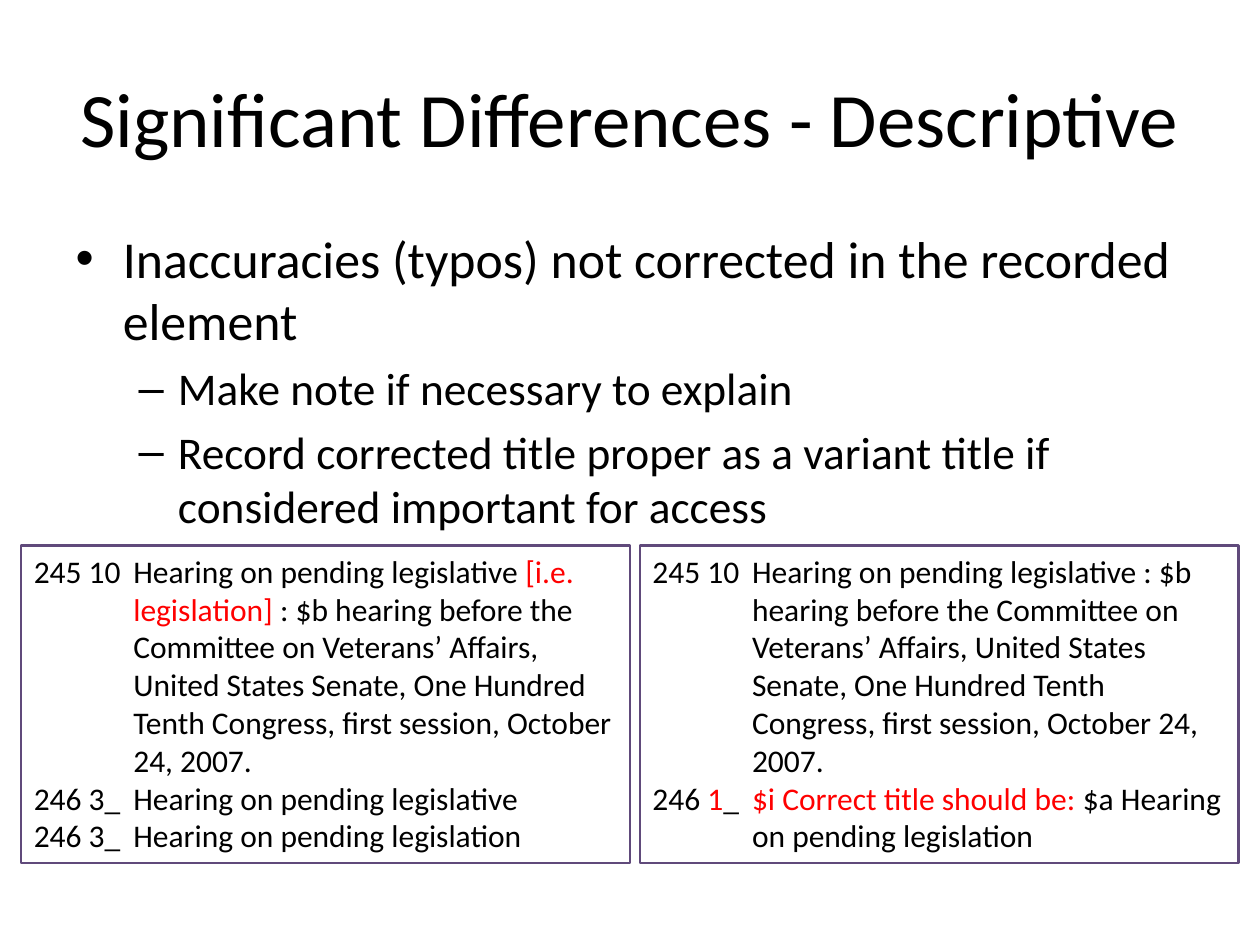
import pptx
import pptx.util
import pptx.dml.color
import pptx.enum.shapes
import pptx.enum.text

FONT = "Calibri"
COLORS = {"text": "000000", "change": "FF0000", "border": "604A7B"}
WIDTH, HEIGHT = 10, 7.5
MARGIN = 0.5
RECORD_TOP, RECORD_HEIGHT = 4.33, 2.52
TAG_WIDTH = 0.79

BULLETS = [
    (0, "Inaccuracies (typos) not corrected in the recorded element"),
    (1, "Make note if necessary to explain"),
    (1, "Record corrected title proper as a variant title if considered important for access"),
]
BULLET_SIZES = [29.6, 25.9]

# Each record is a list of fields; each field is a list of (text, color name) pieces.
BRACKETED_RECORD = [
    [("245 10\tHearing on pending legislative ", "text"),
     ("[i.e. legislation]", "change"),
     (" : $b hearing before the Committee on Veterans’ Affairs, United States Senate, "
      "One Hundred Tenth Congress, first session, October 24, 2007.", "text")],
    [("246 3_\tHearing on pending legislative", "text")],
    [("246 3_\tHearing on pending legislation", "text")],
]
NOTED_RECORD = [
    [("245 10\tHearing on pending legislative : $b hearing before the Committee on "
      "Veterans’ Affairs, United States Senate, One Hundred Tenth Congress, "
      "first session, October 24, 2007.", "text")],
    [("246 ", "text"), ("1", "change"), ("_\t", "text"),
     ("$i Correct title should be: ", "change"),
     ("$a Hearing on pending legislation", "text")],
]


def rgb(name):
    return pptx.dml.color.RGBColor.from_string(COLORS[name])


def place(shape, left, top, width, height):
    shape.left, shape.top, shape.width, shape.height = (
        pptx.util.Inches(length) for length in (left, top, width, height))


def add_text(paragraph, text, size=18, color="text"):
    run = paragraph.add_run()
    run.text = text
    run.font.name = FONT
    run.font.size = pptx.util.Pt(size)
    run.font.color.rgb = rgb(color)


def next_paragraph(frame, index):
    return frame.paragraphs[0] if index == 0 else frame.add_paragraph()


def fill_title(title, text):
    place(title, MARGIN, 0.3, WIDTH - 2 * MARGIN, 1.25)
    add_text(title.text_frame.paragraphs[0], text, size=44)


def fill_bullets(body, bullets):
    place(body, MARGIN, 1.75, WIDTH - 2 * MARGIN, 2.25)
    body.text_frame.auto_size = pptx.enum.text.MSO_AUTO_SIZE.NONE
    for index, (level, text) in enumerate(bullets):
        paragraph = next_paragraph(body.text_frame, index)
        paragraph.level = level
        add_text(paragraph, text, size=BULLET_SIZES[level])


def add_record(slide, fields, left, width, line_width):
    """Add a bordered catalog record whose fields hang to the right of their tags."""
    box = slide.shapes.add_shape(pptx.enum.shapes.MSO_SHAPE.RECTANGLE, 0, 0, 0, 0)
    place(box, left, RECORD_TOP, width, RECORD_HEIGHT)
    box.shadow.inherit = False
    box.fill.background()
    box.line.color.rgb = rgb("border")
    box.line.width = pptx.util.Pt(line_width)
    frame = box.text_frame
    frame.word_wrap = True
    frame.vertical_anchor = pptx.enum.text.MSO_ANCHOR.TOP
    indent = pptx.util.Inches(TAG_WIDTH)
    for index, pieces in enumerate(fields):
        paragraph = next_paragraph(frame, index)
        paragraph.alignment = pptx.enum.text.PP_ALIGN.LEFT
        properties = paragraph._p.get_or_add_pPr()
        properties.set("marL", str(indent))
        properties.set("indent", str(-indent))
        for text, color in pieces:
            add_text(paragraph, text, color=color)


def main():
    presentation = pptx.Presentation()
    presentation.slide_width = pptx.util.Inches(WIDTH)
    presentation.slide_height = pptx.util.Inches(HEIGHT)
    slide = presentation.slides.add_slide(presentation.slide_layouts[1])
    fill_title(slide.shapes.title, "Significant Differences - Descriptive")
    fill_bullets(slide.placeholders[1], BULLETS)
    add_record(slide, BRACKETED_RECORD, left=0.17, width=4.83, line_width=1.25)
    add_record(slide, NOTED_RECORD, left=5.08, width=4.75, line_width=1.5)
    presentation.save("out.pptx")


if __name__ == "__main__":
    main()
